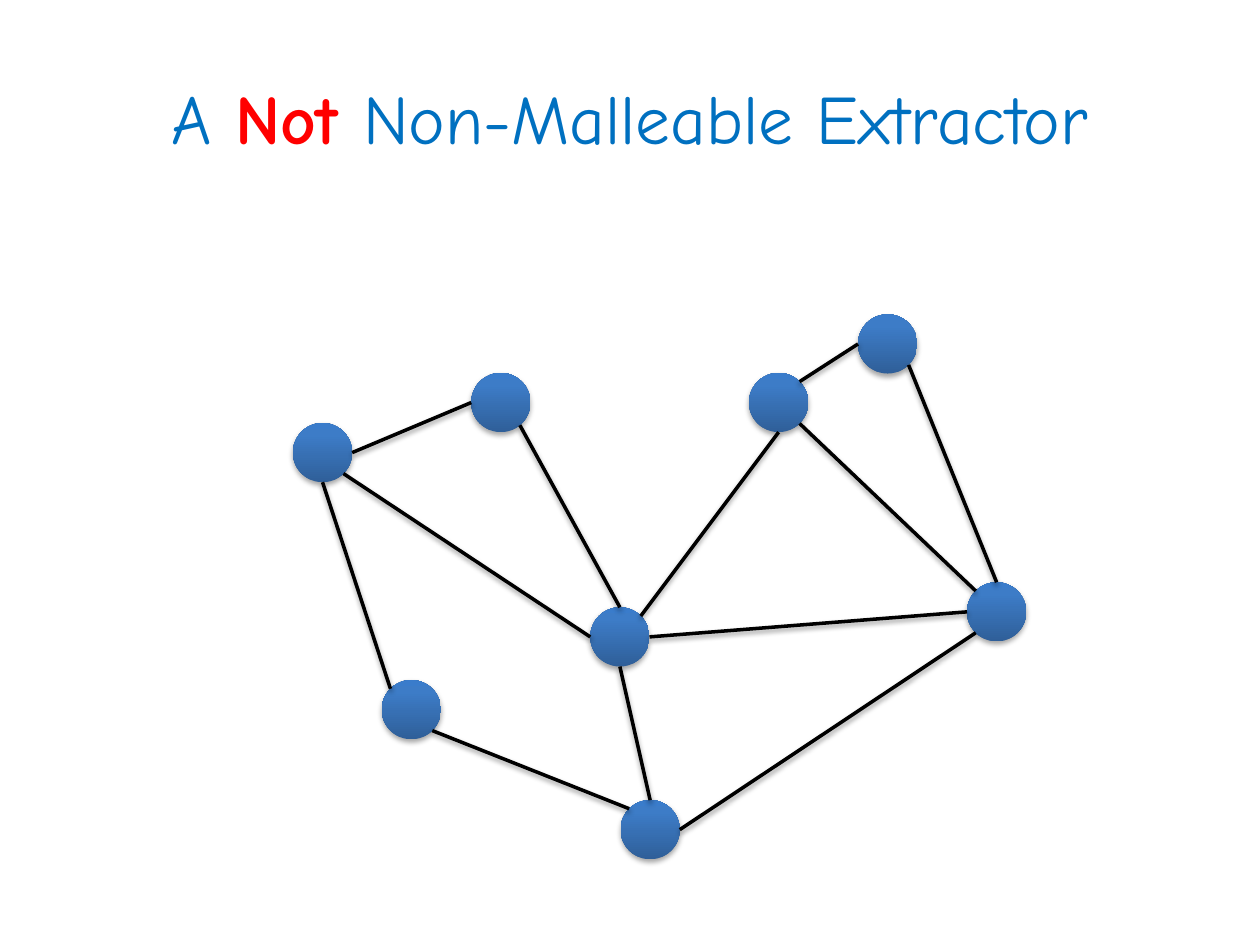
from dataclasses import dataclass
from math import cos, radians, sin

from lxml import etree
from pptx import Presentation
from pptx.dml.color import RGBColor
from pptx.enum.shapes import MSO_CONNECTOR, MSO_SHAPE
from pptx.enum.text import MSO_ANCHOR, PP_ALIGN
from pptx.oxml.ns import qn
from pptx.util import Inches, Pt

OVAL = MSO_SHAPE.OVAL
STRAIGHT = MSO_CONNECTOR.STRAIGHT
CENTER = PP_ALIGN.CENTER
MIDDLE = MSO_ANCHOR.MIDDLE

SLIDE_W, SLIDE_H = 10, 7.5


@dataclass(frozen=True)
class Theme:
    font: str = "Comic Neue"
    title_size: float = 39.6
    title: str = "0070C0"
    emphasis: str = "FF0000"
    edge: str = "000000"
    edge_width: float = 2
    shadow: str = "000000"
    # (position in percent, colour), from the bottom of a vertex upwards
    vertex: tuple = ((0, "2F5F99"), (80, "3D7CC7"), (100, "3A7CCB"))
    vertex_diameter: float = 0.47


THEME = Theme()

# Vertex centres, in percent of the slide's width and height
VERTICES = {
    "left": (25.6, 47.9),
    "upper left": (39.75, 42.6),
    "lower left": (32.65, 75.1),
    "hub": (49.2, 67.4),
    "bottom": (51.6, 87.8),
    "top right": (70.45, 36.4),
    "upper right": (61.8, 42.6),
    "right": (79.1, 64.75),
}

# Edges: vertex and direction on its rim (degrees clockwise from east), twice
EDGES = [
    ("left", 0, "upper left", 180),
    ("hub", 270, "upper left", 50),
    ("hub", 180, "left", 45),
    ("lower left", 225, "left", 90),
    ("hub", 315, "upper right", 90),
    ("right", 270, "top right", 45),
    ("right", 225, "upper right", 45),
    ("right", 135, "bottom", 0),
    ("bottom", 225, "lower left", 45),
    ("upper right", 315, "top right", 180),
    ("hub", 90, "bottom", 270),
    ("hub", 0, "right", 180),
]


def add_color(parent, color, alpha=None):
    node = etree.SubElement(parent, qn("a:srgbClr"), val=color)
    if alpha is not None:
        etree.SubElement(node, qn("a:alpha"), val=str(alpha * 1000))


def add_shadow(element, distance, alpha):
    """Soft shadow that falls straight down."""
    effects = etree.SubElement(element.spPr, qn("a:effectLst"))
    shadow = etree.SubElement(
        effects, qn("a:outerShdw"), blurRad=str(Pt(3.1)),
        dist=str(Pt(distance)), dir="5400000", rotWithShape="0")
    add_color(shadow, THEME.shadow, alpha)


def add_run(paragraph, text, *, color, size=THEME.title_size, bold=False):
    run = paragraph.add_run()
    run.text = text
    run.font.name = THEME.font
    run.font.size = Pt(size)
    run.font.bold = bold
    run.font.color.rgb = RGBColor.from_string(color)


def add_title(slide):
    box = slide.shapes.add_textbox(
        Inches(0.05 * SLIDE_W), Inches(0.04 * SLIDE_H),
        Inches(0.9 * SLIDE_W), Inches(SLIDE_H / 6))
    frame = box.text_frame
    frame.word_wrap = True
    frame.vertical_anchor = MIDDLE
    line = frame.paragraphs[0]
    line.alignment = CENTER
    add_run(line, "A ", color=THEME.title)
    add_run(line, "Not ", color=THEME.emphasis, bold=True)
    add_run(line, "Non-Malleable Extractor", color=THEME.title)


def vertex_center(name):
    across, down = VERTICES[name]
    return across / 100 * SLIDE_W, down / 100 * SLIDE_H


def rim_point(name, angle):
    x, y = vertex_center(name)
    radius = THEME.vertex_diameter / 2
    turn = radians(angle)
    return Inches(x + radius * cos(turn)), Inches(y + radius * sin(turn))


def add_vertex(slide, name):
    x, y = vertex_center(name)
    diameter = THEME.vertex_diameter
    vertex = slide.shapes.add_shape(
        OVAL, Inches(x - diameter / 2), Inches(y - diameter / 2),
        Inches(diameter), Inches(diameter))
    vertex.fill.gradient()
    vertex.fill.gradient_angle = 90
    vertex.line.fill.background()

    # Replace the two preset gradient stops
    stops = vertex._element.spPr.find(".//" + qn("a:gsLst"))
    stops[:] = []
    for position, color in THEME.vertex:
        stop = etree.SubElement(stops, qn("a:gs"), pos=str(position * 1000))
        add_color(stop, color)
    add_shadow(vertex._element, distance=1.8, alpha=35)


def add_edge(slide, start, start_angle, end, end_angle):
    edge = slide.shapes.add_connector(
        STRAIGHT, *rim_point(start, start_angle), *rim_point(end, end_angle))
    edge.line.color.rgb = RGBColor.from_string(THEME.edge)
    edge.line.width = Pt(THEME.edge_width)
    add_shadow(edge._element, distance=1.6, alpha=38)


def main():
    deck = Presentation()
    deck.slide_width, deck.slide_height = Inches(SLIDE_W), Inches(SLIDE_H)
    slide = deck.slides.add_slide(deck.slide_layouts[6])

    add_title(slide)

    # Graph: vertices first, edges on top
    for name in VERTICES:
        add_vertex(slide, name)
    for edge in EDGES:
        add_edge(slide, *edge)

    deck.save("out.pptx")


if __name__ == "__main__":
    main()
